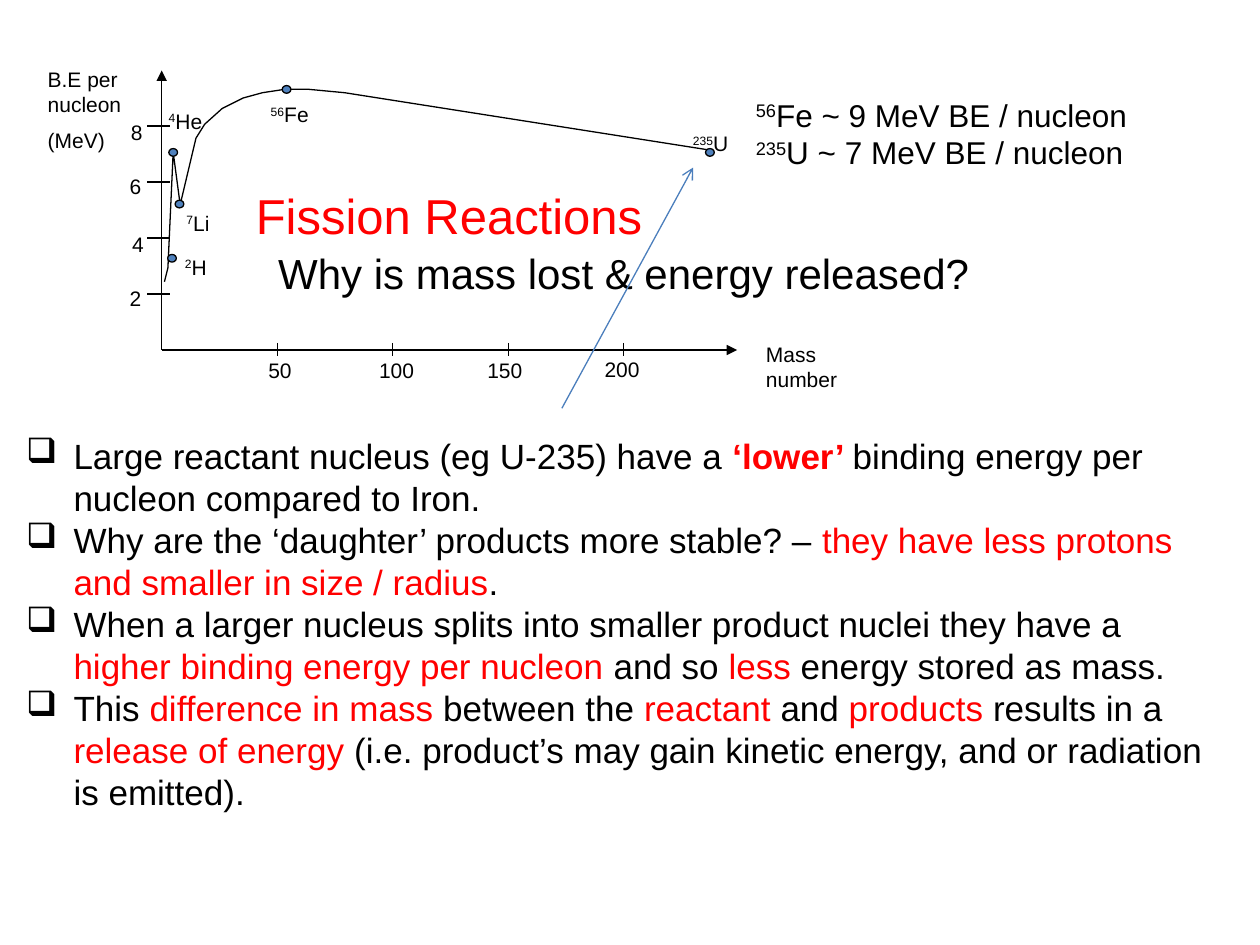
"""Build the fission reactions slide with its binding energy curve."""
import lxml.etree
import pptx
import pptx.dml.color
import pptx.enum.shapes
import pptx.enum.text
import pptx.oxml.ns
import pptx.util

Pt = pptx.util.Pt
RGB = pptx.dml.color.RGBColor.from_string
qn = pptx.oxml.ns.qn

THEME = {
    "font": "Arial",
    "black": RGB("000000"), "red": RGB("FF0000"),
    "marker": RGB("4F81BD"), "pointer": RGB("4B7EBC"),
    "title": 28, "question": 24, "body": 20, "note": 18, "label": 12,
    "line": 0.75,
}

TITLE = [[("Fission Reactions", "red")]]
QUESTION = [[("Why is mass lost & energy released?", "")]]
ENERGIES = [[("56", "super"), ("Fe ~ 9 MeV BE / nucleon", "")],
            [("235", "super"), ("U ~ 7 MeV BE / nucleon", "")]]
EXPLANATION = [
    [("Large reactant nucleus (eg U-235) have a ", ""), ("‘lower’ ", "red bold"),
     ("binding energy per nucleon compared to Iron.", "")],
    [("Why are the ‘daughter’ products more stable? – ", ""),
     ("they have less protons and smaller in size / radius", "red"), (".", "")],
    [("When a larger nucleus splits into smaller product nuclei they have a ", ""),
     ("higher binding energy per nucleon ", "red"), ("and so", ""),
     (" less ", "red"), ("energy stored as mass.", "")],
    [("This ", ""), ("difference in mass ", "red"), ("between the ", ""),
     ("reactant ", "red"), ("and", ""), (" products ", "red"),
     ("results in a ", ""), ("release of energy ", "red"),
     ("(i.e. product’s may gain kinetic energy, and or radiation is emitted).", "")],
]
ENERGY_AXIS = [[("B.E per nucleon", "")], [("(MeV)", "")]]
MASS_AXIS = [[("Mass number", "")]]

MASS_TICKS = [(50, 146.2, 200.9), (100, 209.5, 200.9),
              (150, 271.4, 200.9), (200, 338.4, 200.2)]
ENERGY_TICKS = [(2, 67, 159.8), (4, 68.4, 128.9), (6, 67, 95.8), (8, 67.7, 64.8)]
NUCLIDES = [
    ("2", "H", (98.3, 147.6), (98.6, 141.8)),
    ("4", "He", (99, 87.1), (89.3, 58.3)),
    ("7", "Li", (102.6, 116.6), (99.4, 116.6)),
    ("56", "Fe", (163.8, 51.1), (147.6, 54.7)),
    ("235", "U", (405.7, 87.1), (388.8, 71.3)),
]
CURVE = [(94.3, 160.6), (95.8, 152.6), (98.6, 87.1), (103, 116.6), (111.6, 79.2),
         (117.4, 70.6), (126.7, 61.9), (139, 56.2), (150.5, 52.6), (162.7, 51.1),
         (175.7, 51.1), (197.3, 53.3), (406.8, 86.4)]
ORIGIN = (92.4, 200)
POINTS_PER_NUCLEON = 1.32
POINTS_PER_MEV = 16


def write(frame, paragraphs, size, gap=0):
    """Fill a text frame with styled runs."""
    frame.word_wrap = True
    frame.vertical_anchor = pptx.enum.text.MSO_ANCHOR.TOP
    for index, runs in enumerate(paragraphs):
        paragraph = frame.add_paragraph() if index else frame.paragraphs[0]
        paragraph.alignment = pptx.enum.text.PP_ALIGN.LEFT
        paragraph.space_before = Pt(gap if index else 0)
        for text, style in runs:
            run = paragraph.add_run()
            run.text = text
            run.font.name = THEME["font"]
            run.font.size = Pt(size)
            run.font.bold = "bold" in style
            run.font.color.rgb = THEME["red" if "red" in style else "black"]
            if "super" in style:
                run._r.get_or_add_rPr().set("baseline", "30000")


def add_text(slide, paragraphs, size, left, top, width, height, gap=0):
    """Add a wrapping text box and return its frame."""
    frame = slide.shapes.add_textbox(Pt(left), Pt(top), Pt(width), Pt(height)).text_frame
    write(frame, paragraphs, size, gap)
    return frame


def add_bullets(frame, indent):
    """Give each paragraph a hanging box bullet."""
    for paragraph in frame.paragraphs:
        properties = paragraph._p.get_or_add_pPr()
        properties.set("marL", str(Pt(indent)))
        properties.set("indent", str(-Pt(indent)))
        lxml.etree.SubElement(properties, qn("a:buChar")).set("char", "❑")


def add_line(slide, start, end, colour="black", arrowhead=None):
    """Draw a thin straight line, with an optional arrowhead at its end."""
    line = slide.shapes.add_connector(
        pptx.enum.shapes.MSO_CONNECTOR.STRAIGHT, *map(Pt, start + end))
    line.line.color.rgb = THEME[colour]
    line.line.width = Pt(THEME["line"])
    properties = line._element.spPr
    if arrowhead:
        outline = properties.get_or_add_ln()
        lxml.etree.SubElement(outline, qn("a:tailEnd")).set("type", arrowhead)
    lxml.etree.SubElement(properties, qn("a:effectLst"))


def outline_in_black(shape):
    """Set a thin black outline without a shadow."""
    shape.shadow.inherit = False
    shape.line.color.rgb = THEME["black"]
    shape.line.width = Pt(THEME["line"])


def add_axes(slide):
    """Draw both axes with their ticks and labels."""
    x0, y0 = ORIGIN
    label = THEME["label"]
    add_line(slide, (x0, y0), (x0, 40.3), arrowhead="triangle")
    add_line(slide, (x0, y0), (421.2, y0), arrowhead="triangle")
    for mass, left, top in MASS_TICKS:
        x = x0 + mass * POINTS_PER_NUCLEON
        add_line(slide, (x, y0 - 4), (x, y0 + 3.2))
        add_text(slide, [[(str(mass), "")]], label, left, top, 40, 21.6)
    for energy, left, top in ENERGY_TICKS:
        y = y0 - energy * POINTS_PER_MEV
        add_line(slide, (x0 - 8.2, y), (x0 + 4.8, y))
        add_text(slide, [[(str(energy), "")]], label, left, top, 26, 21.6)
    add_text(slide, ENERGY_AXIS, label, 20.2, 34.6, 58.5, 50, gap=6)
    add_text(slide, MASS_AXIS, label, 430.6, 191.5, 68.4, 36)


def add_curve(slide):
    """Draw the binding energy curve and its marked nuclides."""
    builder = slide.shapes.build_freeform(*CURVE[0], scale=Pt(1))
    builder.add_line_segments(CURVE[1:], close=False)
    curve = builder.convert_to_shape()
    curve.fill.background()
    outline_in_black(curve)
    width, height = 5, 4.4
    for mass, symbol, (x, y), (left, top) in NUCLIDES:
        marker = slide.shapes.add_shape(
            pptx.enum.shapes.MSO_SHAPE.OVAL,
            Pt(x - width / 2), Pt(y - height / 2), Pt(width), Pt(height))
        marker.fill.solid()
        marker.fill.fore_color.rgb = THEME["marker"]
        outline_in_black(marker)
        add_text(slide, [[(mass, "super"), (symbol, "")]], THEME["label"],
                 left, top, 51.8, 21.6)


def main():
    """Assemble and save the slide."""
    deck = pptx.Presentation()
    deck.slide_width, deck.slide_height = Pt(720), Pt(540)
    slide = deck.slides.add_slide(deck.slide_layouts[5])

    explanation = add_text(slide, EXPLANATION, THEME["body"], 7.9, 244.8, 699, 248.4)
    add_bullets(explanation, 27)
    add_axes(slide)
    add_curve(slide)

    title = slide.shapes.title
    title.left, title.top, title.width, title.height = map(Pt, (139, 102.2, 388, 41))
    title.text_frame.auto_size = pptx.enum.text.MSO_AUTO_SIZE.NONE
    write(title.text_frame, TITLE, THEME["title"])

    add_text(slide, QUESTION, THEME["question"], 151.9, 138.2, 444.2, 36)
    add_text(slide, ENERGIES, THEME["note"], 424.8, 51.1, 295.2, 51.1)
    add_line(slide, (321.1, 233.3), (396, 95.8), "pointer", "arrow")
    deck.save("out.pptx")


if __name__ == "__main__":
    main()
